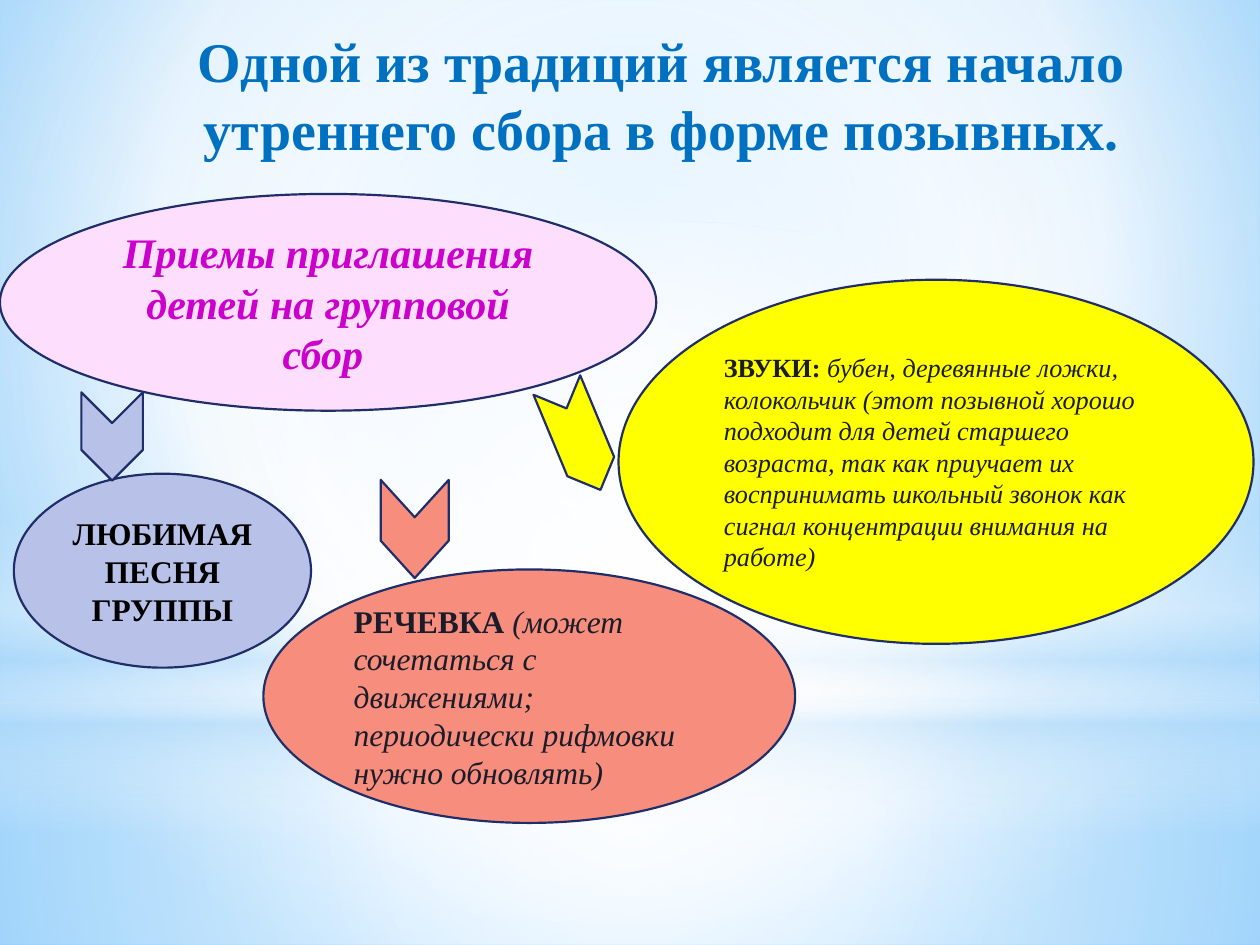
"""Build a slide on ways of calling children to the morning group gathering."""
from lxml.etree import SubElement
from pptx import Presentation
from pptx.dml.color import RGBColor as Rgb
from pptx.enum.shapes import MSO_SHAPE as Shape
from pptx.enum.text import MSO_ANCHOR as Anchor, PP_ALIGN as Align
from pptx.oxml.ns import qn
from pptx.util import Cm, Pt

WIDTH, HEIGHT = 25.4, 19.05
FONT = "Times New Roman"
COLORS = {
    "title": "0070C0", "outline": "1F2E69", "ink": "1B1C2A", "black": "000000",
    "magenta": "CC00CC", "pink": "FDDFFD", "lilac": "B8C2E9",
    "yellow": "FFFF00", "coral": "F78D7C",
    "white": "FFFFFF", "haze": "B4DCFA", "sky": "9ED5FF", "blue": "5BB9FF",
}
TITLE = "Одной из традиций является начало утреннего сбора в форме позывных."
TITLE_PLACE = (3.18, 0.66, 20.32, 2.72)

CENTER = (50, 50, 50, 50)
SKY = [(0, "sky", 100), (60, "white", 100), (100, "blue", 100)]
SKY_FOCUS = (20, 10, 20, 60)
BACKDROP = [
    (Shape.RECTANGLE, (0, 14.17, WIDTH, 4.88), CENTER,
     [(0, "white", 91), (37, "white", 76), (100, "haze", 79)]),
    (Shape.RECTANGLE, (0, 0, WIDTH, 14.17), CENTER,
     [(0, "white", 89), (48, "white", 62), (100, "haze", 79)]),
    (Shape.RECTANGLE, (0, 10.46, WIDTH, 6.35), None,
     [(0, "white", 0), (29, "white", 30), (45, "haze", 40),
      (55, "white", 26), (65, "haze", 60), (100, "white", 0)]),
    (Shape.OVAL, (0, 4.44, WIDTH, 14.17), CENTER,
     [(0, "white", 100), (56, "white", 0)]),
]

# place, fill, text colour, size, alignment, spans of (text, bold, italic)
OVALS = [
    ((0.28, 9.55, 5.99, 3.91), "lilac", "black", 18, Align.CENTER,
     [("ЛЮБИМАЯ ПЕСНЯ ГРУППЫ", True, False)]),
    ((0, 3.91, 13.23, 4.37), "pink", "magenta", 24, Align.CENTER,
     [("Приемы приглашения детей на групповой сбор ", True, True)]),
    ((12.47, 5.64, 12.8, 7.34), "yellow", "ink", 15, Align.LEFT,
     [("ЗВУКИ: ", True, False),
      ("бубен, деревянные ложки, колокольчик (этот позывной хорошо подходит "
       "для детей старшего возраста, так как приучает их воспринимать "
       "школьный звонок как сигнал концентрации внимания на работе)",
       False, True)]),
    ((5.31, 11.48, 10.72, 5.11), "coral", "ink", 18, Align.LEFT,
     [("РЕЧЕВКА ", True, False),
      ("(может сочетаться с движениями; периодически рифмовки нужно обновлять)",
       False, True)]),
]
CHEVRONS = [
    ((1.37, 8.18, 1.78, 1.24), 90, 0.5, "lilac"),
    ((7.37, 9.98, 1.98, 1.37), 90, 0.55, "coral"),
    ((10.52, 8.31, 2.29, 1.02), 67.4, 0.5, "yellow"),
]


def color(name):
    return Rgb.from_string(COLORS[name])


def add_gradient(owner, fill, stops, focus):
    fill.solid()
    solid = owner.xpath(".//a:solidFill")[0]
    gradient = solid.makeelement(qn("a:gradFill"), {"rotWithShape": "1"})
    stop_list = SubElement(gradient, qn("a:gsLst"))
    for position, name, opacity in stops:
        stop = SubElement(stop_list, qn("a:gs"), pos=str(position * 1000))
        tint = SubElement(stop, qn("a:srgbClr"), val=COLORS[name])
        if opacity < 100:
            SubElement(tint, qn("a:alpha"), val=str(opacity * 1000))
    if focus:
        radial = SubElement(gradient, qn("a:path"), path="circle")
        edges = {side: str(part * 1000) for side, part in zip("ltrb", focus)}
        SubElement(radial, qn("a:fillToRect"), edges)
    else:
        SubElement(gradient, qn("a:lin"), ang=str(90 * 60000), scaled="0")
    solid.getparent().replace(solid, gradient)


def add_shape(slide, kind, place, fill=None):
    shape = slide.shapes.add_shape(kind, *map(Cm, place))
    shape.shadow.inherit = False
    if fill:
        shape.fill.solid()
        shape.fill.fore_color.rgb = color(fill)
        shape.line.color.rgb = color("outline")
        shape.line.width = Pt(1.25)
    else:
        shape.line.fill.background()
    return shape


def write(box, spans, size, ink, align, anchor):
    frame = box.text_frame
    frame.word_wrap = True
    frame.vertical_anchor = anchor
    para = frame.paragraphs[0]
    para.alignment = align
    para.font.name, para.font.size = FONT, Pt(size)
    para.font.color.rgb = color(ink)
    for text, bold, italic in spans:
        span = para.add_run()
        span.text = text
        span.font.bold, span.font.italic = bold, italic


def main():
    deck = Presentation()
    deck.slide_width, deck.slide_height = Cm(WIDTH), Cm(HEIGHT)
    slide = deck.slides.add_slide(deck.slide_layouts[6])
    add_gradient(slide.element, slide.background.fill, SKY, SKY_FOCUS)
    for kind, place, focus, stops in BACKDROP:
        shape = add_shape(slide, kind, place)
        add_gradient(shape.element, shape.fill, stops, focus)
    for place, fill, ink, size, align, spans in OVALS:
        oval = add_shape(slide, Shape.OVAL, place, fill)
        write(oval, spans, size, ink, align, Anchor.MIDDLE)
    for place, angle, depth, fill in CHEVRONS:
        chevron = add_shape(slide, Shape.CHEVRON, place, fill)
        chevron.rotation = angle
        chevron.adjustments[0] = depth
    title = slide.shapes.add_textbox(*map(Cm, TITLE_PLACE))
    write(title, [(TITLE, True, False)], 32, "title", Align.CENTER, Anchor.BOTTOM)
    deck.save("out.pptx")


if __name__ == "__main__":
    main()
